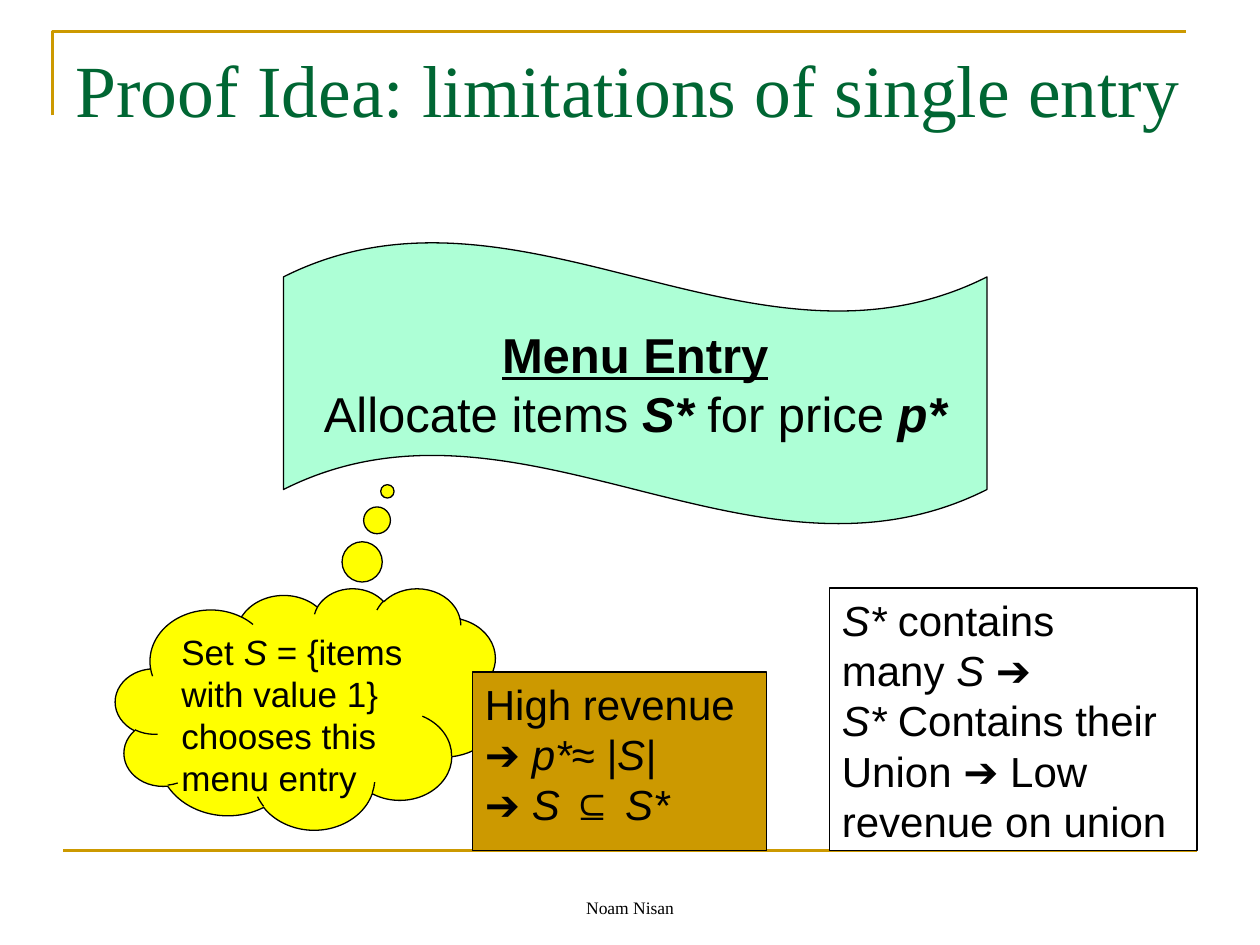
from dataclasses import dataclass
from typing import NamedTuple

from pptx import Presentation
from pptx.dml.color import RGBColor
from pptx.enum.shapes import MSO_CONNECTOR, MSO_SHAPE
from pptx.enum.text import MSO_ANCHOR, MSO_AUTO_SIZE, PP_ALIGN
from pptx.oxml.ns import qn
from pptx.util import Inches, Pt

GOLD = RGBColor(0xCC, 0x99, 0x00)
GREEN = RGBColor(0x00, 0x66, 0x33)
MINT = RGBColor(0xAD, 0xFF, 0xD6)
YELLOW = RGBColor(0xFF, 0xFF, 0x00)
WHITE = RGBColor(0xFF, 0xFF, 0xFF)
BLACK = RGBColor(0x00, 0x00, 0x00)
SANS, SERIF = "Arial", "Times New Roman"
CELL = Inches(1) // 12


class Run(NamedTuple):
    text: str
    italic: bool = False
    bold: bool = False
    underline: bool = False


class Area(NamedTuple):
    col: float
    row: float
    cols: float
    rows: float


@dataclass
class Box:
    kind: MSO_SHAPE
    area: Area
    fill: RGBColor
    size: int
    lines: list[list[Run]]
    align: PP_ALIGN = PP_ALIGN.LEFT
    anchor: MSO_ANCHOR = MSO_ANCHOR.TOP
    adjustments: tuple[float, ...] = ()


BOXES = [
    Box(MSO_SHAPE.WAVE, Area(27, 23, 67, 27), MINT, 28,
        [[Run("Menu Entry", bold=True, underline=True)],
         [Run("Allocate items "), Run("S*", True, True),
          Run(" for price "), Run("p*", True, True)]],
        PP_ALIGN.CENTER, MSO_ANCHOR.MIDDLE),
    Box(MSO_SHAPE.CLOUD_CALLOUT, Area(11, 56, 37, 23), YELLOW, 20,
        [[Run("Set "), Run("S", True),
          Run(" = {items with value 1} chooses this menu entry")]],
        adjustments=(0.2, -0.9)),
    Box(MSO_SHAPE.RECTANGLE, Area(45, 64, 28, 17), GOLD, 24,
        [[Run("High revenue ➔ "), Run("p*≈ |S|", True)],
         [Run("➔ "), Run("S ⊆ S*", True)]]),
    Box(MSO_SHAPE.RECTANGLE, Area(79, 56, 35, 25), WHITE, 24,
        [[Run("S* ", True), Run("contains")],
         [Run("many "), Run("S ", True), Run("➔")],
         [Run("S* ", True), Run("Contains their Union ➔ Low revenue on union")]]),
]


def grid(*cells: float) -> list[int]:
    return [round(n * CELL) for n in cells]


def write(sp, lines: list[list[Run]], font: str, size: int, color: RGBColor,
          align: PP_ALIGN, anchor: MSO_ANCHOR) -> None:
    tf = sp.text_frame
    tf.word_wrap = True
    tf.auto_size = MSO_AUTO_SIZE.NONE
    tf.vertical_anchor = anchor
    for i, runs in enumerate(lines):
        p = tf.add_paragraph() if i else tf.paragraphs[0]
        p.alignment = align
        p.font.name, p.font.size = font, Pt(size)
        p.font.color.rgb = color
        for run in runs:
            r = p.add_run()
            r.text = run.text
            r.font.italic, r.font.bold = run.italic, run.bold
            r.font.underline = run.underline


def draw_box(shapes, box: Box) -> None:
    sp = shapes.add_shape(box.kind, *grid(*box.area))
    for i, value in enumerate(box.adjustments):
        sp.adjustments[i] = value
    sp.shadow.inherit = False
    sp.fill.solid()
    sp.fill.fore_color.rgb = box.fill
    sp.line.color.rgb = BLACK
    sp.line.width = Pt(0.75)
    write(sp, box.lines, SANS, box.size, BLACK, box.align, box.anchor)


def draw_frame(shapes) -> None:
    builder = shapes.build_freeform(*grid(5, 11))
    builder.add_line_segments([grid(5, 3), grid(113, 3)], close=False)
    corner = builder.convert_to_shape()
    corner.fill.background()
    corner.shadow.inherit = False
    rule = shapes.add_connector(MSO_CONNECTOR.STRAIGHT, *grid(6, 81, 114, 81))
    spPr = rule._element.spPr
    for sp in (corner, rule):
        sp.line.color.rgb = GOLD
        sp.line.width = Pt(1.5)
    spPr.append(spPr.makeelement(qn("a:effectLst"), {}))


def main() -> None:
    prs = Presentation()
    prs.slide_width, prs.slide_height = grid(120, 90)
    shapes = prs.slides.add_slide(prs.slide_layouts[5]).shapes

    draw_frame(shapes)
    title = shapes.title
    title.left, title.top, title.width, title.height = grid(6, 3.6, 108, 15)
    write(title, [[Run("Proof Idea: limitations of single entry")]],
          SERIF, 42, GREEN, PP_ALIGN.LEFT, MSO_ANCHOR.TOP)
    footer = shapes.add_textbox(*grid(41, 82, 38, 6))
    write(footer, [[Run("Noam Nisan")]],
          SERIF, 10, BLACK, PP_ALIGN.CENTER, MSO_ANCHOR.BOTTOM)
    for box in BOXES:
        draw_box(shapes, box)

    prs.save("out.pptx")


if __name__ == "__main__":
    main()
